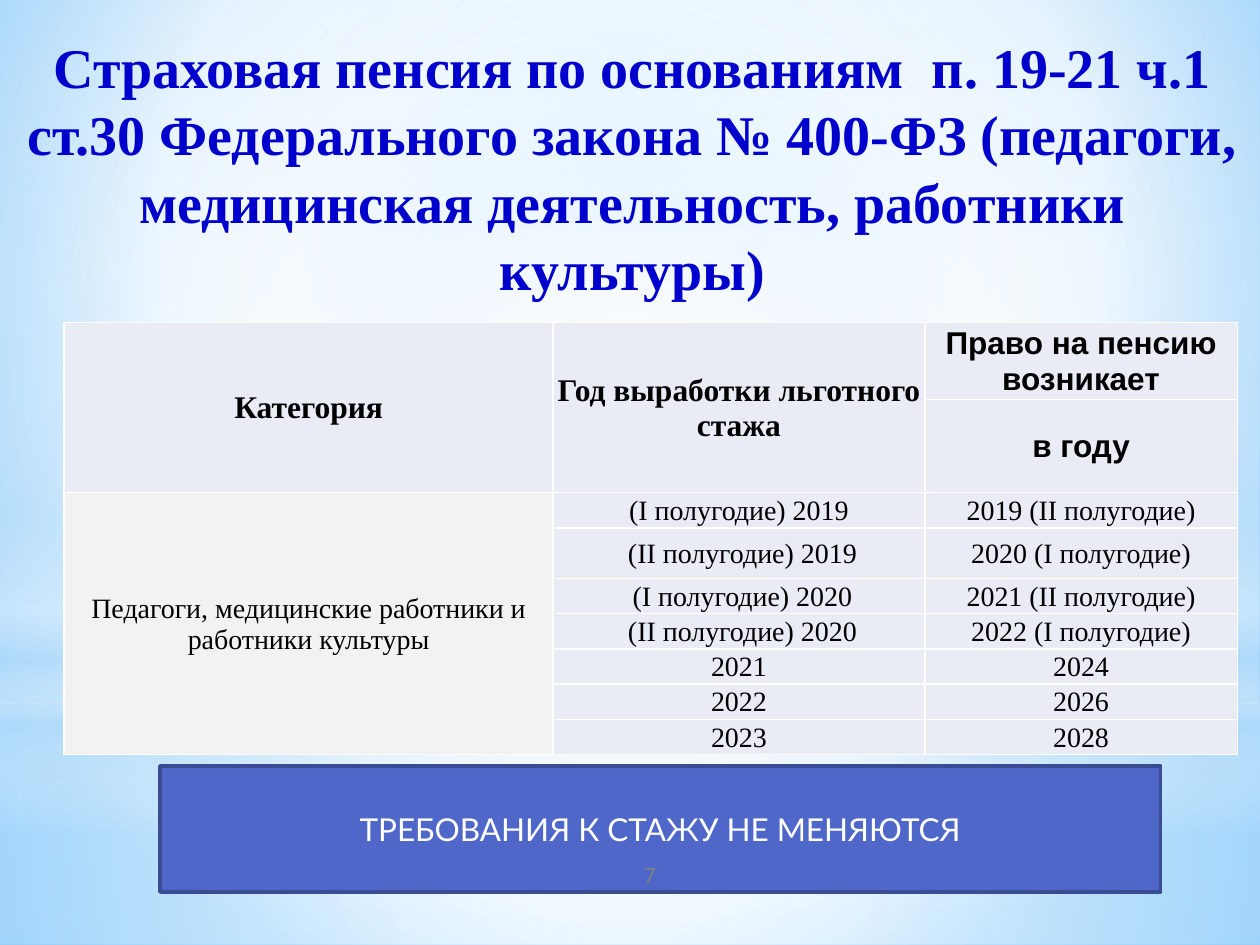
from lxml.etree import SubElement
from pptx import Presentation
from pptx.dml.color import RGBColor
from pptx.enum.shapes import MSO_SHAPE
from pptx.enum.text import MSO_ANCHOR, MSO_AUTO_SIZE, PP_ALIGN
from pptx.oxml import parse_xml
from pptx.oxml.ns import nsdecls, qn
from pptx.util import Inches, Pt

SERIF = "Times New Roman"
HEAD = {"name": SERIF, "size": Pt(18), "bold": True, "color": "000000"}
SANS = {**HEAD, "name": "Arial"}
BODY = {**HEAD, "size": Pt(16), "bold": False}
CENTER = (50, 50, 50, 50)
COLS = (3.88, 2.95, 2.48)
ROWS = (0.61, 0.74, 0.28, 0.4) + (0.28,) * 5
YEARS = (
    (" (I полугодие) 2019 ", "2019 (II полугодие)"),
    (" (II полугодие) 2019", "2020 (I полугодие)"),
    (" (I полугодие) 2020", "2021 (II полугодие)"),
    (" (II полугодие) 2020", "2022 (I полугодие)"),
    ("2021", "2024"),
    ("2022", "2026"),
    ("2023", "2028"),
)


def tint(hue):
    """Turn a hex string into a colour."""
    return RGBColor.from_string(hue)


def paint(fill, hue):
    """Give a fill one solid colour."""
    fill.solid()
    fill.fore_color.rgb = tint(hue)


def blend(root, stops, focus=None):
    """Swap the solid fill under root for a gradient of (place, hue, opacity)."""
    grad = parse_xml(f'<a:gradFill {nsdecls("a")} rotWithShape="1"><a:gsLst/></a:gradFill>')
    for place, hue, alpha in stops:
        stop = SubElement(grad[0], qn("a:gs"), pos=str(place * 1000))
        color = SubElement(stop, qn("a:srgbClr"), val=hue)
        if alpha < 100:
            SubElement(color, qn("a:alpha"), val=str(alpha * 1000))
    if focus:
        ring = SubElement(grad, qn("a:path"), path="circle")
        sides = {side: str(part * 1000) for side, part in zip("ltrb", focus)}
        SubElement(ring, qn("a:fillToRect"), **sides)
    else:
        SubElement(grad, qn("a:lin"), ang="5400000", scaled="0")
    old = root.find(".//" + qn("a:solidFill"))
    old.getparent().replace(old, grad)


def write(frame, text, style):
    """Put one centred, styled paragraph into a text frame."""
    frame.word_wrap = True
    para = frame.paragraphs[0]
    para.alignment = PP_ALIGN.CENTER
    run = para.add_run()
    run.text = text
    for key, value in style.items():
        if key == "color":
            run.font.color.rgb = tint(value)
        else:
            setattr(run.font, key, value)


def add_box(slide, kind, box):
    """Add a solid shape without shadow or line."""
    shape = slide.shapes.add_shape(kind, *map(Inches, box))
    shape.shadow.inherit = False
    paint(shape.fill, "4E67C8")
    shape.line.fill.background()
    return shape


def add_sky(slide, box):
    """Lay the background glow over the given box."""
    left, top, width, height = box
    paint(slide.background.fill, "FFFFFF")
    blend(slide.background._cSld, [(0, "9ED5FF", 100), (60, "FFFFFF", 100),
                                   (100, "5BB9FF", 100)], (20, 10, 20, 60))
    rect, oval = MSO_SHAPE.RECTANGLE, MSO_SHAPE.OVAL
    layers = (
        (rect, 5.58, height - 5.58, CENTER,
         [(0, "FFFFFF", 91), (37, "FFFFFF", 76), (100, "B4DCFA", 79)]),
        (rect, 0, 5.58, CENTER,
         [(0, "FFFFFF", 89), (48, "FFFFFF", 62), (100, "B4DCFA", 79)]),
        (rect, 4.12, 2.5, None,
         [(0, "FFFFFF", 0), (29, "FFFFFF", 30), (45, "B4DCFA", 40),
          (55, "FFFFFF", 26), (65, "B4DCFA", 60), (100, "FFFFFF", 0)]),
        (oval, 1.75, 5.58, CENTER, [(0, "FFFFFF", 100), (56, "FFFFFF", 0)]),
    )
    for kind, down, tall, focus, stops in layers:
        shape = add_box(slide, kind, (left, top + down, width, tall))
        blend(shape._element.spPr, stops, focus)


def add_text(slide, box, text, style):
    """Add a centred text box."""
    frame = slide.shapes.add_textbox(*map(Inches, box)).text_frame
    write(frame, text, style)
    return frame


def edge(cell):
    """Draw thin white borders round a cell."""
    props = cell._tc.get_or_add_tcPr()
    for spot, side in enumerate("LRTB"):
        props.insert(spot, parse_xml(
            f'<a:ln{side} {nsdecls("a")} w="12700"><a:solidFill>'
            f'<a:srgbClr val="FFFFFF"/></a:solidFill></a:ln{side}>'))


def add_grid(slide, box):
    """Build the pension table in the given box."""
    table = slide.shapes.add_table(len(ROWS), len(COLS), *map(Inches, box)).table
    for col, width in zip(table.columns, COLS):
        col.width = Inches(width)
    for row, height in zip(table.rows, ROWS):
        row.height = Inches(height)
    form = {"margin_left": Inches(0.01), "margin_right": Inches(0.01),
            "margin_top": Inches(0.01), "margin_bottom": 0,
            "vertical_anchor": MSO_ANCHOR.MIDDLE}
    for cell in table.iter_cells():
        for key, value in form.items():
            setattr(cell, key, value)
        paint(cell.fill, "E9EBF5")
        edge(cell)
    for first, last, col in ((0, 1, 0), (0, 1, 1), (2, 8, 0)):
        table.cell(first, col).merge(table.cell(last, col))
    paint(table.cell(2, 0).fill, "F2F2F2")
    words = [
        (0, 0, "Категория", HEAD),
        (0, 1, "Год выработки льготного стажа", HEAD),
        (0, 2, "Право на пенсию возникает", SANS),
        (1, 2, "в году", SANS),
        (2, 0, "Педагоги, медицинские работники и работники культуры", BODY),
    ]
    words += [(row, col, text, BODY) for row, pair in enumerate(YEARS, 2)
              for col, text in enumerate(pair, 1)]
    for row, col, text, style in words:
        write(table.cell(row, col).text_frame, text, style)


def add_note(slide, box):
    """Add the blue banner below the table."""
    shape = add_box(slide, MSO_SHAPE.RECTANGLE, box)
    paint(shape.line.fill, "3A4C94")
    shape.line.width = Pt(2)
    shape.text_frame.vertical_anchor = MSO_ANCHOR.MIDDLE
    write(shape.text_frame, "ТРЕБОВАНИЯ К СТАЖУ НЕ МЕНЯЮТСЯ",
          {"name": "Lato", "size": Pt(18), "color": "FFFFFF"})


def main():
    """Build and save the slide."""
    deck = Presentation()
    deck.slide_width, deck.slide_height = Inches(10), Inches(7.5)
    slide = deck.slides.add_slide(deck.slide_layouts[6])
    add_sky(slide, (0, 0, 10, 7.5))
    title = add_text(
        slide, (0.02, 0.21, 10, 2.26),
        "Страховая пенсия по основаниям  п. 19-21 ч.1 ст.30 Федерального закона "
        "№ 400-ФЗ (педагоги, медицинская деятельность, работники культуры)",
        {"name": SERIF, "size": Pt(32), "bold": True, "color": "0000CC"})
    title.auto_size = MSO_AUTO_SIZE.SHAPE_TO_FIT_TEXT
    add_grid(slide, (0.51, 2.56, sum(COLS), sum(ROWS)))
    add_note(slide, (1.27, 6.08, 7.94, 1))
    add_text(slide, (4.76, 6.8, 0.8, 0.3), "7",
             {"name": "Lato", "size": Pt(12), "color": "808080"})
    deck.save("out.pptx")


if __name__ == "__main__":
    main()
